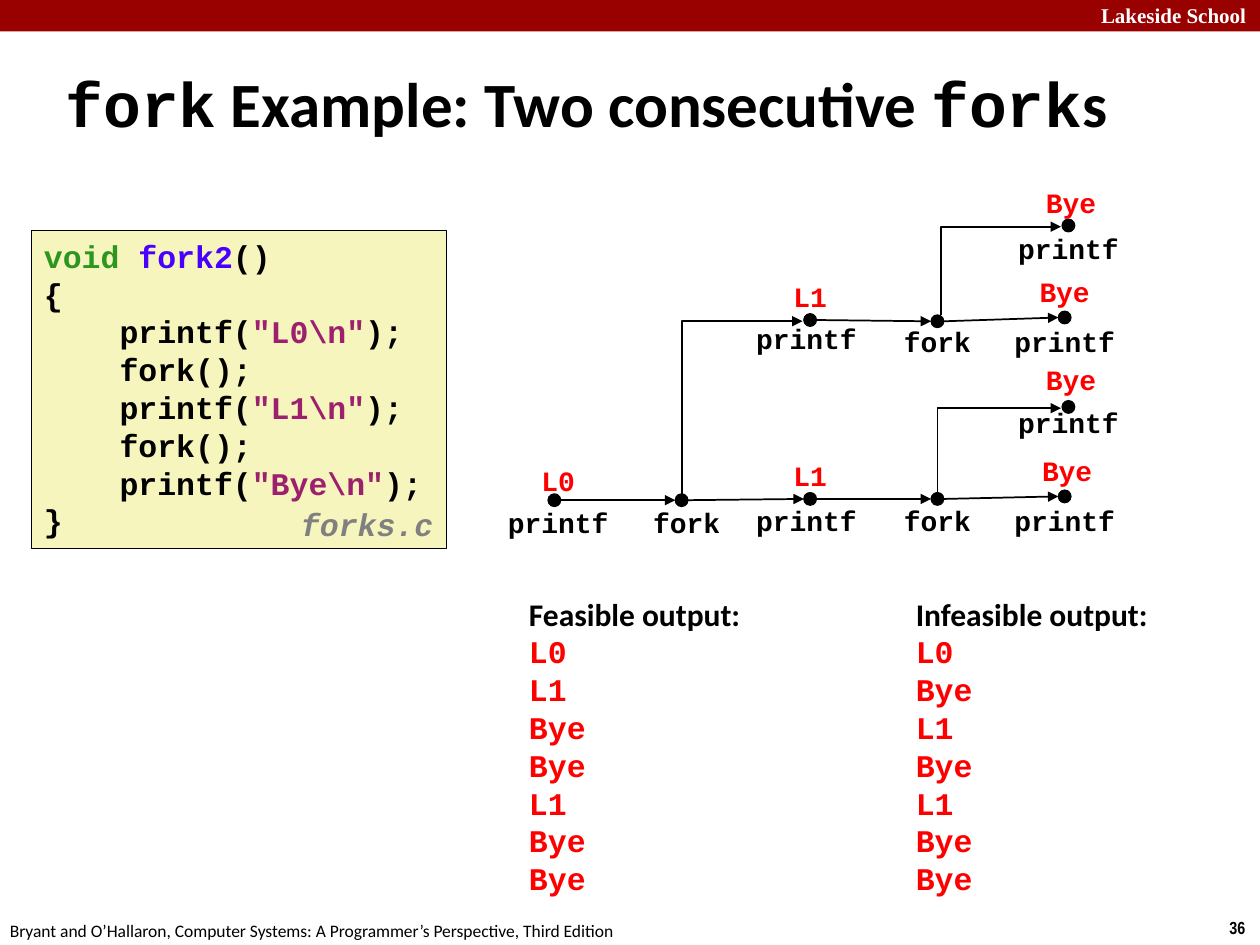
import pptx
import pptx.dml.color
import pptx.enum.shapes
import pptx.enum.text
import pptx.oxml
import pptx.oxml.ns
import pptx.util

Inches = pptx.util.Inches
Pt = pptx.util.Pt
SHAPE = pptx.enum.shapes.MSO_SHAPE
LINK = pptx.enum.shapes.MSO_CONNECTOR
ALIGN = pptx.enum.text.PP_ALIGN
ANCHOR = pptx.enum.text.MSO_ANCHOR
FIT = pptx.enum.text.MSO_AUTO_SIZE

# Theme: named text styles as (font, size, colour, bold, italic), and fills
MONO, SANS = "Courier New", "Calibri"
THEME = {
    "title": (SANS, 36, "000000", True, False),
    "mono": (MONO, 36, "000000", True, False),
    "brand": ("Times New Roman", 12, "FFFFFF", True, False),
    "page": ("Arial Narrow", 10, "000000", True, False),
    "foot": (SANS, 10, "000000", False, False),
    "code": (MONO, 18, "000000", True, False),
    "type": (MONO, 18, "2D961E", True, False),
    "func": (MONO, 18, "4A00FF", True, False),
    "str": (MONO, 18, "9D206F", True, False),
    "file": (MONO, 18, "808080", True, True),
    "head": (SANS, 18, "000000", True, False),
    "out": (MONO, 18, "FF0000", True, False),
    "call": (MONO, 16, "000000", True, False),
    "print": (MONO, 16, "FF0000", True, False),
    "bar": "990000", "panel": "F6F5BD", "ink": "000000",
}

# Content: a line is a list of (text, style) runs
TITLE = [("fork", "mono"), (" Example: Two consecutive ", "title"),
         ("fork", "mono"), ("s", "title")]


def call(name, text=None):
    if text is None:
        return [(name + "();", "code")]
    return [(name + "(", "code"), (text, "str"), (");", "code")]


BODY = [call("printf", r'"L0\n"'), call("fork"), call("printf", r'"L1\n"'),
        call("fork"), call("printf", r'"Bye\n"')]
CODE = [[("void ", "type"), ("fork2", "func"), ("()", "code")],
        [("{", "code")], *BODY, [("}", "code")]]

# Labels: text, style, box, wrap
LABELS = [
    ("Lakeside School", "brand", (8.64, -0.03, 1.43, 0.3), True),
    ("36", "page", (9.66, 7.23, 0.34, 0.27), False),
    ("Bryant and O’Hallaron, Computer Systems: A Programmer’s Perspective, "
     "Third Edition", "foot", (-0.02, 7.25, 5.08, 0.27), False),
]
LISTS = [
    ("Feasible output:", "L0 L1 Bye Bye L1 Bye Bye", 4.1, 1.9),
    ("Infeasible output:", "L0 Bye L1 Bye L1 Bye Bye", 7.17, 2.07),
]

# Process graph: centre of dot, call (centre, top), output (text, centre, top)
NODES = {
    "start": (4.4, 3.97, ("printf", 4.43, 3.96), ("L0", 4.43, 3.63)),
    "split": (5.41, 3.97, ("fork", 5.45, 3.96), None),
    "low": (6.43, 3.96, ("printf", 6.4, 3.95), ("L1", 6.43, 3.59)),
    "low fork": (7.44, 3.96, ("fork", 7.44, 3.95), None),
    "low end": (8.45, 3.94, ("printf", 8.45, 3.95), ("Bye", 8.47, 3.55)),
    "low child": (8.48, 3.23, ("printf", 8.48, 3.17), ("Bye", 8.5, 2.83)),
    "top": (6.43, 2.54, ("printf", 6.4, 2.5), ("L1", 6.43, 2.17)),
    "top fork": (7.44, 2.55, ("fork", 7.44, 2.53), None),
    "top end": (8.45, 2.52, ("printf", 8.45, 2.53), ("Bye", 8.45, 2.13)),
    "top child": (8.48, 1.79, ("printf", 8.48, 1.79), ("Bye", 8.5, 1.42)),
}
CHAINS = [("start", "split", "low", "low fork", "low end"),
          ("top", "top fork", "top end")]
# Branches: from, to, shift of the start to the right
FORKS = [("split", "top", 0), ("low fork", "low child", 0),
         ("top fork", "top child", 0.03)]
DOT = 0.1


def rgb(name):
    return pptx.dml.color.RGBColor.from_string(name)


def apply(item, values):
    for key, value in values.items():
        setattr(item, key, value)


def write(frame, lines, wrap=True, align=ALIGN.LEFT, anchor=ANCHOR.TOP,
          fit=FIT.SHAPE_TO_FIT_TEXT):
    apply(frame, {"word_wrap": wrap, "auto_size": fit,
                  "vertical_anchor": anchor})
    for i, line in enumerate(lines):
        para = frame.paragraphs[0] if i == 0 else frame.add_paragraph()
        para.alignment = align
        for text, style in line:
            run = para.add_run()
            run.text = text
            face, size, hue, bold, slant = THEME[style]
            apply(run.font, {"name": face, "size": Pt(size),
                             "bold": bold, "italic": slant})
            run.font.color.rgb = rgb(hue)
    return frame


def label(lines, box, **form):
    area = slide.shapes.add_textbox(*map(Inches, box))
    return write(area.text_frame, lines, **form)


def solid(kind, box, fill, line=None):
    shape = slide.shapes.add_shape(kind, *map(Inches, box))
    shape.shadow.inherit = False
    shape.fill.solid()
    shape.fill.fore_color.rgb = rgb(THEME[fill])
    if line is None:
        shape.line.fill.background()
    else:
        shape.line.color.rgb = rgb(THEME["ink"])
        shape.line.width = Pt(line)
    return shape


def arrow(x1, y1, x2, y2, kind=LINK.STRAIGHT):
    link = slide.shapes.add_connector(kind, *map(Inches, (x1, y1, x2, y2)))
    link.line.color.rgb = rgb(THEME["ink"])
    link.line.width = Pt(1)
    props = link._element.spPr
    tail = pptx.oxml.ns.qn("a:tailEnd")
    link.line._get_or_add_ln().makeelement(tail)
    tip = pptx.oxml.parse_xml(
        f'<a:tailEnd {pptx.oxml.ns.nsdecls("a")} type="triangle"/>')
    link.line._get_or_add_ln().append(tip)
    props.append(pptx.oxml.parse_xml(
        f'<a:effectLst {pptx.oxml.ns.nsdecls("a")}/>'))
    return link


def branch(x1, y1, x2, y2):
    """Arrow that goes straight up, then right: a turned one-bend connector."""
    link = arrow(x1, y1, x2, y2, LINK.ELBOW)
    wide, high = y1 - y2, x2 - x1
    apply(link, {"left": Inches((x1 + x2 - wide) / 2),
                 "top": Inches((y1 + y2 - high) / 2),
                 "width": Inches(wide), "height": Inches(high)})
    props = link._element.spPr
    props.find(pptx.oxml.ns.qn("a:prstGeom")).set("prst", "bentConnector2")
    frame = props.find(pptx.oxml.ns.qn("a:xfrm"))
    for key, value in {"rot": "5400000", "flipH": "1", "flipV": "1"}.items():
        frame.set(key, value)


deck = pptx.Presentation()
apply(deck, {"slide_width": Inches(10), "slide_height": Inches(7.5)})
slide = deck.slides.add_slide(deck.slide_layouts[5])

# Top bar, page number and credit line
solid(SHAPE.RECTANGLE, (0, 0, 10, 0.25), "bar")
for text, style, box, wrap in LABELS:
    label([[(text, style)]], box, wrap=wrap)

# Title with a hanging indent
title = slide.shapes.title
apply(title, dict(zip(("left", "top", "width", "height"),
                      map(Inches, (0.42, 0.5, 9.33, 0.63)))))
write(title.text_frame, [TITLE], anchor=ANCHOR.MIDDLE, fit=FIT.NONE)
hang = title.text_frame.paragraphs[0]._p.get_or_add_pPr()
hang.set("marL", str(Inches(0.13)))
hang.set("indent", str(-Inches(0.13)))

# Code panel: the function body is set in by four characters
panel = solid(SHAPE.RECTANGLE, (0.25, 1.83, 3.29, 2.52), "panel", 0.25)
write(panel.text_frame, CODE, wrap=False)
for para in panel.text_frame.paragraphs[2:-1]:
    para._p.get_or_add_pPr().set("marL", str(Inches(0.6)))
note = label([[("forks.c", "file")]], (2.29, 3.98, 1.32, 0.39), wrap=False)
note.paragraphs[0].line_spacing = 0.94

# Process graph
for chain in CHAINS:
    for a, b in zip(chain, chain[1:]):
        (x1, y1), (x2, y2) = NODES[a][:2], NODES[b][:2]
        arrow(x1 + DOT / 2, y1, x2 - DOT / 2, y2)
for a, b, shift in FORKS:
    (x1, y1), (x2, y2) = NODES[a][:2], NODES[b][:2]
    branch(x1 + shift, y1 - DOT / 2, x2 - 0.06, y2 + 0.01)
for x, y, name, shown in NODES.values():
    solid(SHAPE.OVAL, (x - DOT / 2, y - DOT / 2, DOT, DOT), "ink", 0.75)
    for part, style, wide in ((name, "call", 1.04), (shown, "print", 0.87)):
        if part:
            text, mid, top = part
            label([[(text, style)]], (mid - wide / 2, top, wide, 0.37),
                  align=ALIGN.CENTER)

# Output lists
for head, words, left, wide in LISTS:
    lines = [[(head, "head")]] + [[(word, "out")] for word in words.split()]
    label(lines, (left, 4.67, wide, 2.52), wrap=False)

deck.save("out.pptx")
